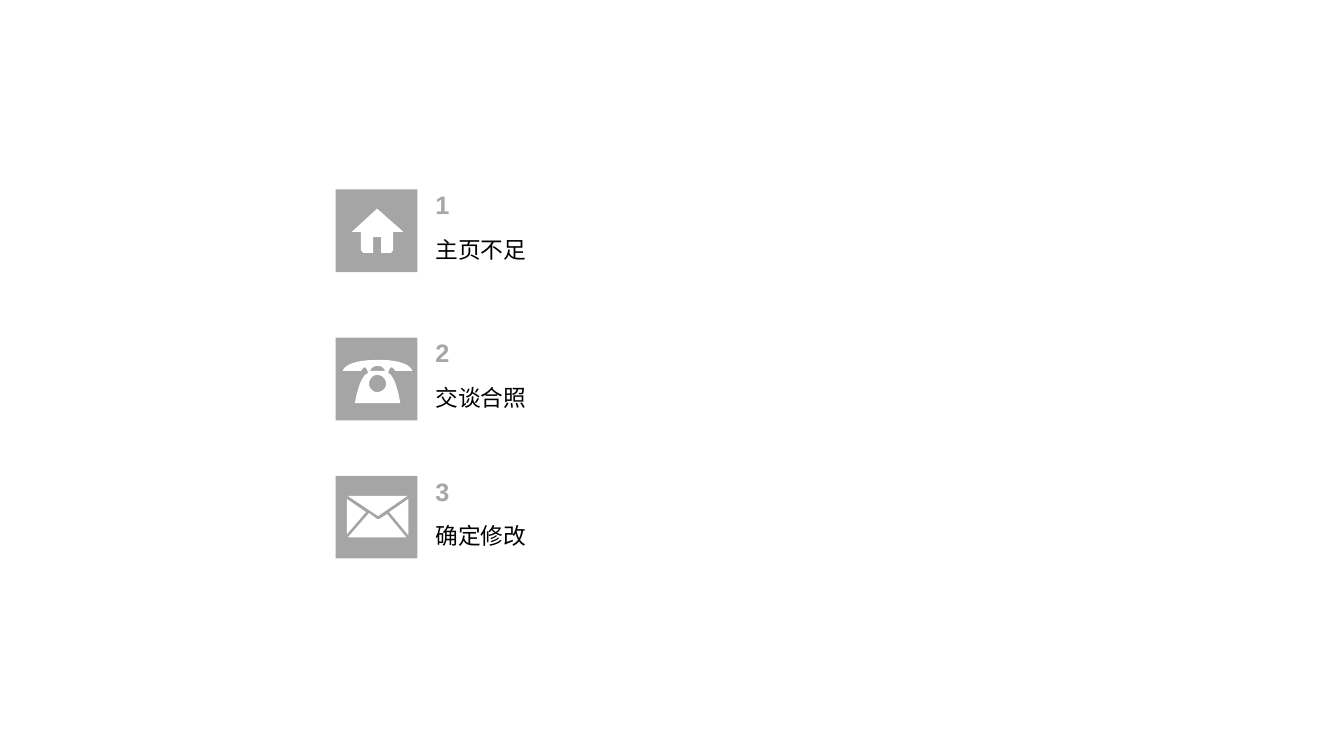
from pptx import Presentation
from pptx.dml.color import RGBColor
from pptx.enum.shapes import MSO_SHAPE
from pptx.enum.text import MSO_ANCHOR, PP_ALIGN
from pptx.util import Inches, Pt


def paint(shape, color):
    shape.fill.solid()
    shape.fill.fore_color.rgb = RGBColor.from_string(color)
    shape.line.fill.background()
    shape.shadow.inherit = False


def trace(contour, steps=8):
    """Turn points and cubic curves (six numbers) into a list of points in EMU."""
    points = [contour[0]]
    for segment in contour[1:]:
        if len(segment) == 2:
            points.append(segment)
            continue
        x0, y0 = points[-1]
        x1, y1, x2, y2, x3, y3 = segment
        for step in range(1, steps + 1):
            t = step / steps
            a, b, c, d = (1 - t) ** 3, 3 * t * (1 - t) ** 2, 3 * t * t * (1 - t), t ** 3
            points.append((a * x0 + b * x1 + c * x2 + d * x3,
                           a * y0 + b * y1 + c * y2 + d * y3))
    return [(Inches(x), Inches(y)) for x, y in points]


# Icon outlines, in slide inches
house = [
    [(3.74, 2.07), (4, 2.3), (3.9, 2.3), (3.9, 2.47), (3.9, 2.49, 3.88, 2.51, 3.87, 2.51),
     (3.78, 2.51), (3.78, 2.35), (3.7, 2.35), (3.7, 2.51), (3.61, 2.51),
     (3.6, 2.51, 3.58, 2.49, 3.58, 2.47), (3.58, 2.31), (3.59, 2.3), (3.49, 2.3)],
]
telephone = [
    [(3.85, 3.7), (3.85, 3.7, 3.87, 3.59, 3.92, 3.68), (4.09, 3.68),
     (4.09, 3.68, 4.07, 3.57, 3.76, 3.57), (3.75, 3.57),
     (3.41, 3.57, 3.4, 3.68, 3.4, 3.68), (3.58, 3.68),
     (3.63, 3.59, 3.65, 3.7, 3.65, 3.7), (3.56, 3.73, 3.52, 4, 3.52, 4),
     (3.97, 4), (3.97, 4, 3.93, 3.73, 3.85, 3.7)],
    [(3.75, 3.63), (3.78, 3.63, 3.81, 3.65, 3.82, 3.68), (3.67, 3.68),
     (3.68, 3.65, 3.71, 3.63, 3.75, 3.63)],
    [(3.74, 3.89), (3.7, 3.89, 3.66, 3.85, 3.66, 3.81), (3.66, 3.76, 3.7, 3.72, 3.74, 3.72),
     (3.79, 3.72, 3.83, 3.76, 3.83, 3.81), (3.83, 3.85, 3.79, 3.89, 3.74, 3.89)],
]
envelope = [
    [(3.44, 4.95), (3.44, 5.3), (3.63, 5.08)],
    [(4.04, 4.92), (3.45, 4.92), (3.75, 5.12)],
    [(3.76, 5.15), (3.74, 5.15), (3.66, 5.09), (3.45, 5.33), (4.03, 5.33), (3.84, 5.1)],
    [(3.86, 5.08), (4.05, 5.31), (4.05, 4.95)],
]

presentation = Presentation()
presentation.slide_width = Inches(13.33)
presentation.slide_height = Inches(7.5)
slide = presentation.slides.add_slide(presentation.slide_layouts[6])

number_format = {"name": "Arial", "size": Pt(18), "bold": True}
label_format = {"name": "Arial", "size": Pt(16.2), "bold": False}
items = [
    (1.88, "1", "主页不足", house),
    (3.35, "2", "交谈合照", telephone),
    (4.72, "3", "确定修改", envelope),
]

for top, number, label, icon in items:
    # Grey tile
    tile = slide.shapes.add_shape(
        MSO_SHAPE.RECTANGLE, Inches(3.33), Inches(top), Inches(0.81), Inches(0.82))
    paint(tile, "A5A5A5")

    # White icon, one freeform with several contours
    contours = [trace(contour) for contour in icon]
    builder = slide.shapes.build_freeform(*contours[0][0], scale=1.0)
    builder.add_line_segments(contours[0][1:], close=True)
    for contour in contours[1:]:
        builder.move_to(*contour[0])
        builder.add_line_segments(contour[1:], close=True)
    paint(builder.convert_to_shape(), "FFFFFF")

    # Number above its label
    for offset, text, color, anchor, alignment, font_format in (
            (-0.05, number, "A6A6A6", MSO_ANCHOR.BOTTOM, PP_ALIGN.LEFT, number_format),
            (0.41, label, "000000", MSO_ANCHOR.TOP, PP_ALIGN.JUSTIFY, label_format)):
        box = slide.shapes.add_textbox(
            Inches(4.22), Inches(top + offset), Inches(5.78), Inches(0.4))
        frame = box.text_frame
        frame.word_wrap = True
        frame.vertical_anchor = anchor
        paragraph = frame.paragraphs[0]
        paragraph.alignment = alignment
        run = paragraph.add_run()
        run.text = text
        run.font.color.rgb = RGBColor.from_string(color)
        for attribute, value in font_format.items():
            setattr(run.font, attribute, value)

presentation.save("out.pptx")
